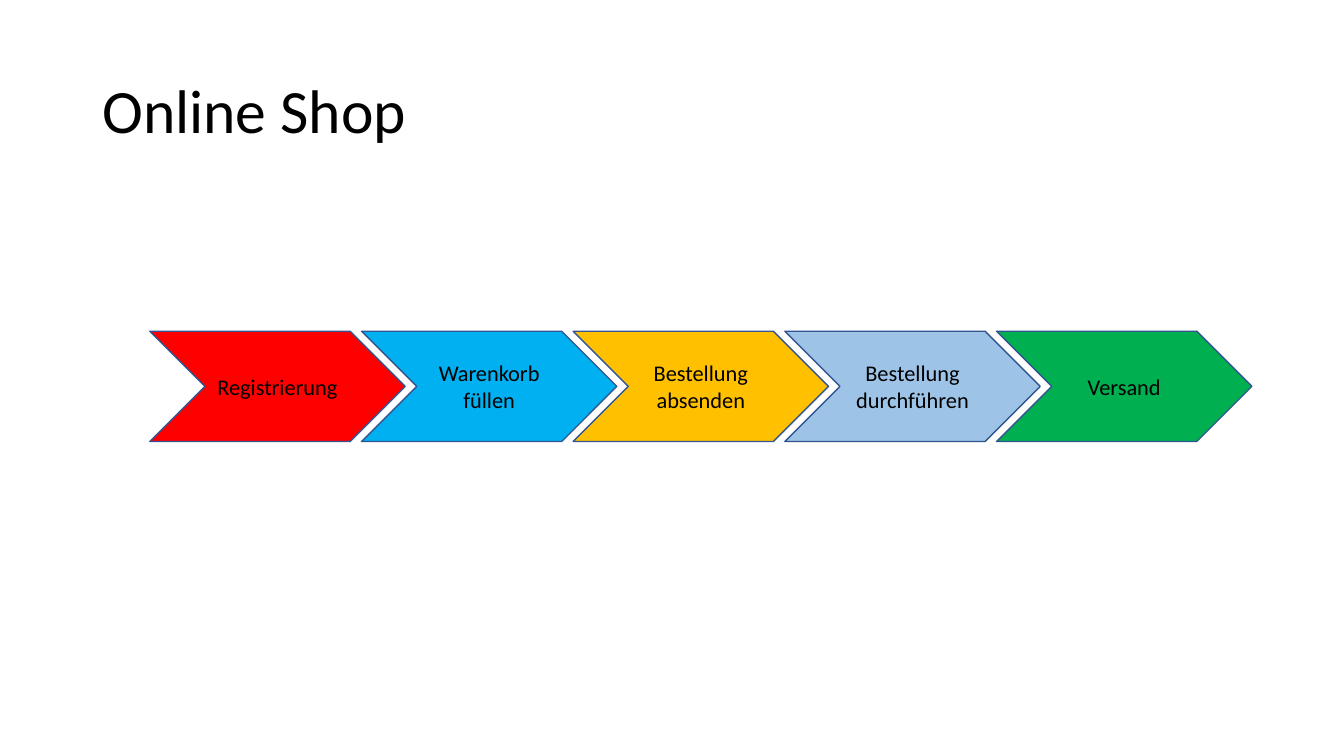
from pptx import Presentation
from pptx.dml.color import RGBColor as RGB
from pptx.enum.shapes import MSO_SHAPE as SHAPE
from pptx.enum.text import MSO_ANCHOR as ANCHOR, PP_ALIGN as ALIGN
from pptx.util import Pt

TITLE = "Online Shop"
STEPS = [
    ("Registrierung", "red"),
    ("Warenkorb\nfüllen", "blue"),
    ("Bestellung\nabsenden", "amber"),
    ("Bestellung\ndurchführen", "sky"),
    ("Versand", "green"),
]
COLORS = {
    "text": "000000",
    "outline": "325491",
    "red": "FF0000",
    "blue": "00B0F0",
    "amber": "FFC000",
    "sky": "9DC3E6",
    "green": "00B050",
}
TITLE_BOX = (66, 28.8, 828, 104.4)
TITLE_FORMAT = {"alignment": ALIGN.LEFT, "line_spacing": 0.9}
STEP_FORMAT = {"alignment": ALIGN.CENTER}
FRAME_FORMAT = {"word_wrap": True, "vertical_anchor": ANCHOR.MIDDLE}
LEFT, TOP, WIDTH, HEIGHT, PITCH = 107, 236.6, 182.4, 78.8, 151.2


def color(name):
    return RGB.from_string(COLORS[name])


def apply(target, values):
    for name, value in values.items():
        setattr(target, name, value)


def write(shape, text, size, paragraph_format):
    tf = shape.text_frame
    apply(tf, FRAME_FORMAT)
    p = tf.paragraphs[0]
    p.text = text
    apply(p, paragraph_format)
    for r in p.runs:
        apply(r.font, {"name": "Calibri", "size": Pt(size)})
        r.font.color.rgb = color("text")


def add_step(s, index, label, fill):
    box = (LEFT + index * PITCH, TOP, WIDTH, HEIGHT)
    sp = s.shapes.add_shape(SHAPE.CHEVRON, *map(Pt, box))
    sp.shadow.inherit = False
    sp.fill.solid()
    sp.fill.fore_color.rgb = color(fill)
    sp.line.color.rgb = color("outline")
    sp.line.width = Pt(1)
    write(sp, label, 16, STEP_FORMAT)


def main():
    prs = Presentation()
    apply(prs, {"slide_width": Pt(960), "slide_height": Pt(540)})
    s = prs.slides.add_slide(prs.slide_layouts[6])
    write(s.shapes.add_textbox(*map(Pt, TITLE_BOX)), TITLE, 44, TITLE_FORMAT)
    for index, (label, fill) in enumerate(STEPS):
        add_step(s, index, label, fill)
    prs.save("out.pptx")


if __name__ == "__main__":
    main()
